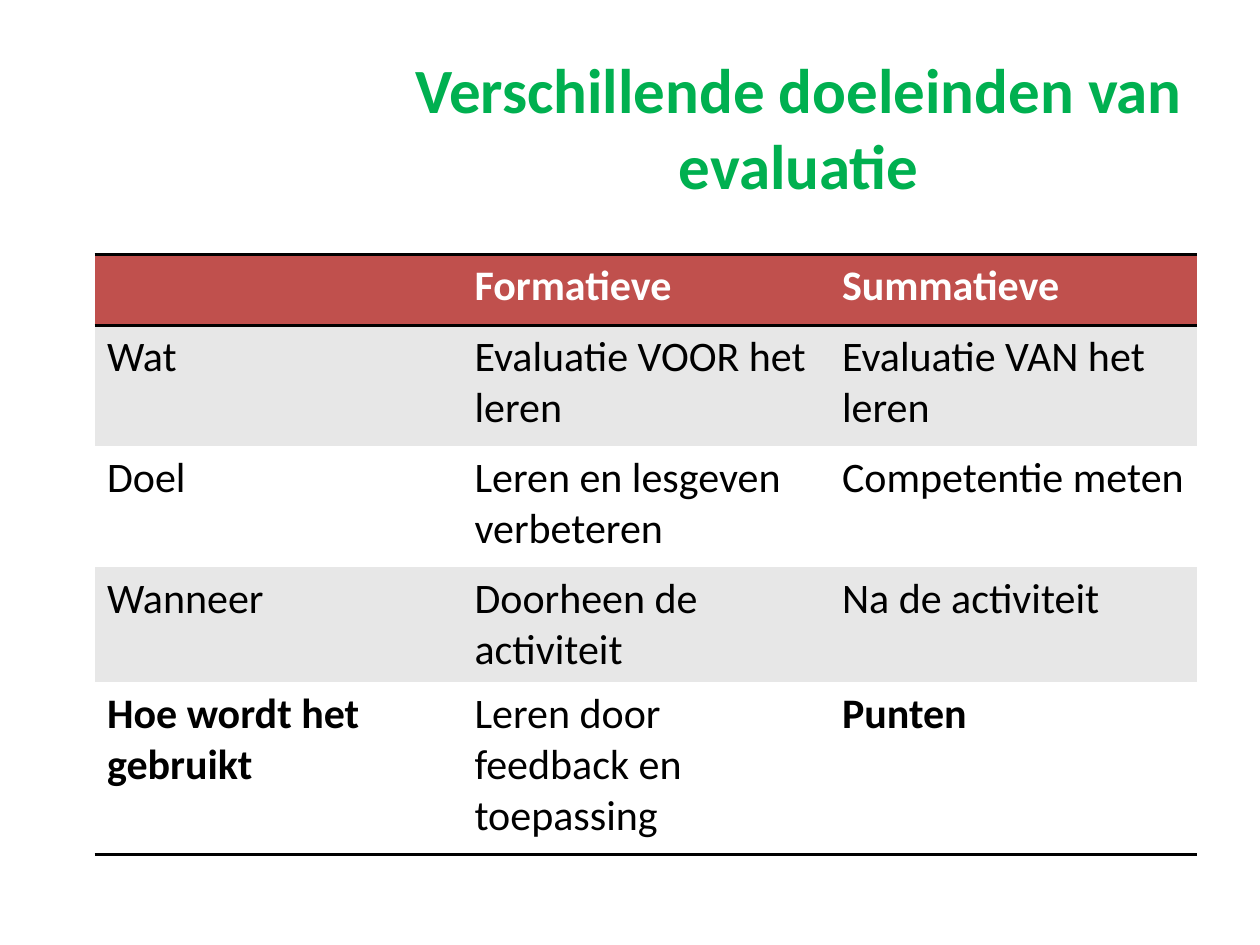
import pptx
import pptx.dml.color
import pptx.enum.text
import pptx.oxml
import pptx.oxml.ns
import pptx.util

Inches = pptx.util.Inches
RGB = pptx.dml.color.RGBColor
GREEN = RGB(0x00, 0xB0, 0x50)
RED = RGB(0xC0, 0x50, 0x4D)
GREY = RGB(0xE7, 0xE7, 0xE7)
WHITE = RGB(0xFF, 0xFF, 0xFF)
BLACK = RGB(0x00, 0x00, 0x00)

PLAIN = "{2D5ABB26-0587-4C30-8999-92F81FD0307C}"
TITLE = "Verschillende doeleinden van evaluatie"
ROWS = [
    ("", "Formatieve", "Summatieve"),
    ("Wat", "Evaluatie VOOR het leren", "Evaluatie VAN het leren"),
    ("Doel", "Leren en lesgeven verbeteren", "Competentie meten"),
    ("Wanneer", "Doorheen de activiteit", "Na de activiteit"),
    ("Hoe wordt het gebruikt", "Leren door feedback en toepassing", "Punten"),
]
STRONG = {"Formatieve", "Summatieve", "Hoe wordt het gebruikt", "Punten"}
TALL = [0.56, 0.96, 0.96, 0.91, 1.37]
WIDE = 8.75


def write(frame, text, size=24, color=BLACK, bold=False, align=None):
    """Put formatted text in the first paragraph of a frame."""
    para = frame.paragraphs[0]
    para.alignment = align
    run = para.add_run()
    run.text = text
    font = run.font
    font.name, font.size, font.bold = "Calibri", pptx.util.Pt(size), bold
    font.color.rgb = color


def rule(cell, side):
    """Draw a black line on one side (T or B) of a cell."""
    line = pptx.oxml.parse_xml(
        f'<a:ln{side} {pptx.oxml.ns.nsdecls("a")} w="{pptx.util.Pt(2)}">'
        f'<a:solidFill><a:srgbClr val="{BLACK}"/></a:solidFill></a:ln{side}>'
    )
    cell._tc.get_or_add_tcPr().append(line)


def shade(cell, color):
    """Fill a cell with one colour."""
    cell.fill.solid()
    cell.fill.fore_color.rgb = color


def head(slide):
    """Place and format the slide title."""
    title = slide.shapes.title
    title.left, title.top = Inches(2.72), Inches(0.3)
    title.width, title.height = Inches(7.24), Inches(1.4)
    title.text_frame.vertical_anchor = pptx.enum.text.MSO_ANCHOR.MIDDLE
    write(title.text_frame, TITLE, size=36, color=GREEN, bold=True,
          align=pptx.enum.text.PP_ALIGN.CENTER)


def grid(slide):
    """Add the table that compares the two kinds of evaluation."""
    frame = slide.shapes.add_table(
        len(ROWS), len(ROWS[0]), Inches(0.75), Inches(2.02),
        Inches(WIDE), Inches(sum(TALL)))
    table = frame.table
    table.horz_banding = False
    table._tbl.tblPr.find(pptx.oxml.ns.qn("a:tableStyleId")).text = PLAIN
    last = len(ROWS) - 1
    for r, texts in enumerate(ROWS):
        table.rows[r].height = Inches(TALL[r])
        fill = RED if r == 0 else GREY if r % 2 else WHITE
        for c, text in enumerate(texts):
            cell = table.cell(r, c)
            if r == 0:
                rule(cell, "T")
            if r in (0, last):
                rule(cell, "B")
            shade(cell, fill)
            if text:
                write(cell.text_frame, text, bold=text in STRONG,
                      color=WHITE if r == 0 else BLACK)


def main():
    """Build the slide and save it."""
    deck = pptx.Presentation()
    deck.slide_width, deck.slide_height = Inches(10), Inches(7.5)
    slide = deck.slides.add_slide(deck.slide_layouts[5])
    head(slide)
    grid(slide)
    deck.save("out.pptx")


if __name__ == "__main__":
    main()
